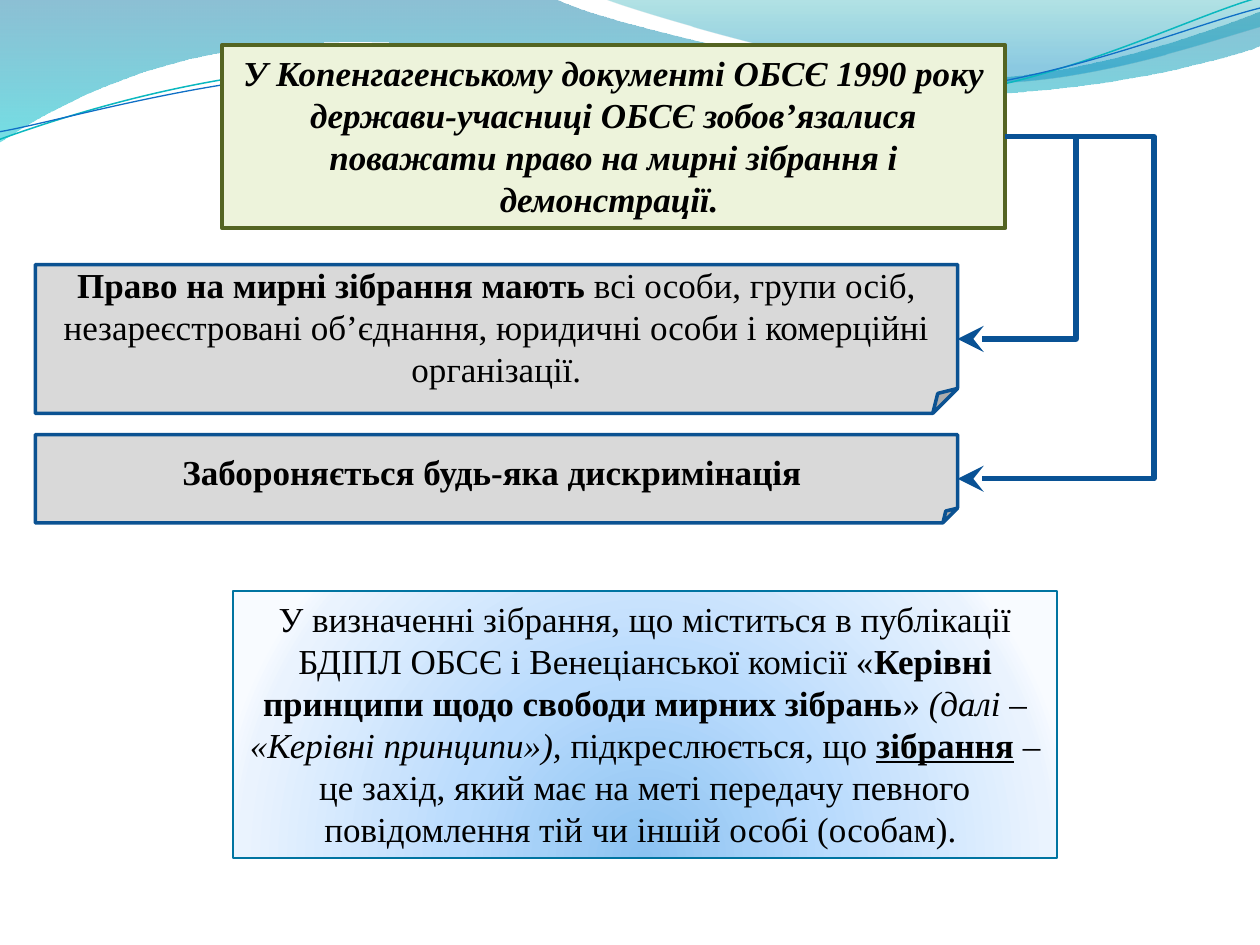
from lxml.etree import SubElement
from pptx import Presentation
from pptx.dml.color import RGBColor
from pptx.enum.shapes import MSO_CONNECTOR, MSO_SHAPE
from pptx.enum.text import MSO_ANCHOR, PP_ALIGN
from pptx.oxml.ns import qn
from pptx.util import Inches, Pt

BLACK = RGBColor(0x00, 0x00, 0x00)
GREY = RGBColor(0xD9, 0xD9, 0xD9)
PALE_GREEN = RGBColor(0xED, 0xF3, 0xDB)
OLIVE = RGBColor(0x54, 0x64, 0x22)
NAVY = RGBColor(0x0B, 0x52, 0x92)
ARROW_BLUE = RGBColor(0x09, 0x52, 0x95)
DEEP_BLUE = RGBColor(0x00, 0x74, 0xA1)
CYAN = RGBColor(0x00, 0xC6, 0xCF)
TEAL = RGBColor(0x00, 0xA1, 0xA9)
SKY = RGBColor(0x00, 0x8B, 0xBF)
LINE_TEAL = RGBColor(0x0A, 0xB8, 0xBF)
LINE_BLUE = RGBColor(0x0F, 0x6F, 0xC6)
GLOW = [(0, RGBColor(0x8B, 0xC2, 0xF1), 100), (43, RGBColor(0xB9, 0xDB, 0xFD), 100),
        (93, RGBColor(0xEA, 0xF3, 0xFE), 100), (100, RGBColor(0xF8, 0xFB, 0xFF), 100)]

prs = Presentation()
prs.slide_width, prs.slide_height = Inches(10), Inches(7.5)
s = prs.slides.add_slide(prs.slide_layouts[6])


def add_curve(start, segments, closed):
    """Draw segments of one point (straight) or three points (cubic Bezier)."""
    builder = s.shapes.build_freeform(Inches(start[0]), Inches(start[1]))
    ends = [(Inches(seg[-1][0]), Inches(seg[-1][1])) for seg in segments]
    builder.add_line_segments(ends, close=closed)
    sp = builder.convert_to_shape()
    sp.shadow.inherit = False
    outline = sp._element.spPr.find(".//" + qn("a:path"))
    for seg, line in zip(segments, outline.findall(qn("a:lnTo"))):
        if len(seg) == 3:
            line.tag = qn("a:cubicBezTo")
            line.remove(line[0])
            for x, y in seg:
                SubElement(line, qn("a:pt"), x=str(Inches(x) - sp.left), y=str(Inches(y) - sp.top))
    return sp


def set_gradient(sp, stops, radial=False):
    """Fill with (position %, colour, opacity %) stops, downwards or radially."""
    sp.fill.gradient()
    grad = sp._element.spPr.find(qn("a:gradFill"))
    for child in list(grad):
        grad.remove(child)
    gs_list = SubElement(grad, qn("a:gsLst"))
    for pos, color, opacity in stops:
        gs = SubElement(gs_list, qn("a:gs"), pos=str(pos * 1000))
        clr = SubElement(gs, qn("a:srgbClr"), val=str(color))
        if opacity < 100:
            SubElement(clr, qn("a:alpha"), val=str(opacity * 1000))
    if radial:
        circle = SubElement(grad, qn("a:path"), path="circle")
        SubElement(circle, qn("a:fillToRect"), l="50000", t="130000", r="50000", b="-30000")
    else:
        SubElement(grad, qn("a:lin"), ang="5400000", scaled="1")


# Waves across the top
waves = [
    ((0, 0), [
        [(4.4, -0.01)],
        [(4.76, 0.17), (6.64, 0.63), (7.58, 0.63)],
        [(8.53, 0.63), (9.58, 0.26), (10, 0.09)],
        [(10.01, 0.36)],
        [(9.83, 0.44), (8.7, 0.76), (7.46, 0.75)],
        [(6.22, 0.75), (3.82, 0.28), (2.57, 0.34)],
        [(1.29, 0.36), (0.46, 0.83), (-0.01, 1.13)],
    ], [(0, DEEP_BLUE, 45), (100, CYAN, 55)]),
    ((4.79, -0.01), [
        [(5.09, 0.11), (6.82, 0.62), (7.69, 0.65)],
        [(8.56, 0.69), (9.61, 0.32), (10, 0.21)],
        [(10, 0)],
    ], [(0, TEAL, 30), (80, SKY, 45)]),
]
for start, segments, stops in waves:
    sp = add_curve(start, segments, True)
    set_gradient(sp, stops)
    sp.line.fill.background()

# Thin lines, drawn level and then tilted
wave_lines = [
    ((-0.02, 0.87), [
        [(0.47, 0.72), (1.58, 0.41), (2.78, 0.42)],
        [(3.96, 0.42), (5.91, 0.93), (7.12, 0.9)],
        [(8.32, 0.87), (9.4, 0.36), (10, 0.22)],
    ], LINE_TEAL, 0.85),
    ((-0.02, 0.81), [
        [(0.46, 0.75), (1.64, 0.45), (2.83, 0.46)],
        [(4.04, 0.47), (5.96, 0.89), (7.16, 0.85)],
        [(8.35, 0.83), (9.42, 0.42), (10.02, 0.3)],
    ], LINE_BLUE, 0.75),
]
for start, segments, color, width in wave_lines:
    sp = add_curve(start, segments, False)
    sp.rotation = 357.3
    sp.fill.background()
    sp.line.color.rgb = color
    sp.line.width = Pt(width)

# Text boxes: geometry, place, fill, line colour and width, anchor, runs
bold = {"bold": True}
boxes = [
    (MSO_SHAPE.RECTANGLE, (1.76, 0.36, 6.22, 1.45), PALE_GREEN, OLIVE, 2.25, MSO_ANCHOR.TOP, [
        ("У Копенгагенському документі ОБСЄ 1990 року держави-учасниці ОБСЄ зобов’язалися "
         "поважати право на мирні зібрання і демонстрації. ", {"bold": True, "italic": True}),
    ]),
    (MSO_SHAPE.FOLDED_CORNER, (0.28, 2.1, 7.32, 1.18), GREY, NAVY, 2, MSO_ANCHOR.MIDDLE, [
        ("Право на мирні зібрання мають", bold),
        (" всі особи, групи осіб, незареєстровані об’єднання, юридичні особи "
         "і комерційні організації.", {}),
    ]),
    (MSO_SHAPE.FOLDED_CORNER, (0.28, 3.45, 7.32, 0.7), GREY, NAVY, 2, MSO_ANCHOR.MIDDLE, [
        ("Забороняється будь-яка дискримінація ", bold),
    ]),
    (MSO_SHAPE.RECTANGLE, (1.85, 4.69, 6.54, 2.12), GLOW, DEEP_BLUE, 0.75, MSO_ANCHOR.TOP, [
        ("У визначенні зібрання, що міститься в публікації БДІПЛ ОБСЄ "
         "і Венеціанської комісії «", {}),
        ("Керівні принципи щодо свободи мирних зібрань", bold),
        ("» ", {}),
        ("(далі – «Керівні принципи»),", {"italic": True}),
        (" підкреслюється, що ", {}),
        ("зібрання", {"bold": True, "underline": True}),
        (" – це захід, який має на меті передачу певного повідомлення "
         "тій чи іншій особі (особам). ", {}),
    ]),
]
placed = []
for geometry, place, fill, line_color, line_width, anchor, runs in boxes:
    sp = s.shapes.add_shape(geometry, *(Inches(v) for v in place))
    sp.shadow.inherit = False
    if fill is GLOW:
        set_gradient(sp, fill, radial=True)
    else:
        sp.fill.solid()
        sp.fill.fore_color.rgb = fill
    sp.line.color.rgb = line_color
    sp.line.width = Pt(line_width)
    tf = sp.text_frame
    tf.word_wrap = True
    tf.vertical_anchor = anchor
    p = tf.paragraphs[0]
    p.alignment = PP_ALIGN.CENTER
    for text, formats in runs:
        r = p.add_run()
        r.text = text
        r.font.color.rgb = BLACK
        for name, value in {"name": "Times New Roman", "size": Pt(20), **formats}.items():
            setattr(r.font, name, value)
    placed.append(sp)
document_box, holders_box, ban_box, definition_box = placed

# Elbow arrows from the document to both rules, turning at bend_x
for target, bend_x in ((ban_box, 9.16), (holders_box, 8.54)):
    arrow = s.shapes.add_connector(MSO_CONNECTOR.ELBOW, 0, 0, 0, 0)
    arrow.begin_connect(document_box, 3)
    arrow.end_connect(target, 3)
    arrow.line.color.rgb = ARROW_BLUE
    arrow.line.width = Pt(3)
    bend = (Inches(bend_x) - arrow.begin_x) / (arrow.end_x - arrow.begin_x)
    spPr = arrow._element.spPr
    guides = spPr.find(qn("a:prstGeom")).get_or_add_avLst()
    SubElement(guides, qn("a:gd"), name="adj1", fmla=f"val {round(bend * 100000)}")
    SubElement(spPr.find(qn("a:ln")), qn("a:tailEnd"), type="stealth", w="lg", len="lg")
    SubElement(spPr, qn("a:effectLst"))

prs.save("out.pptx")
